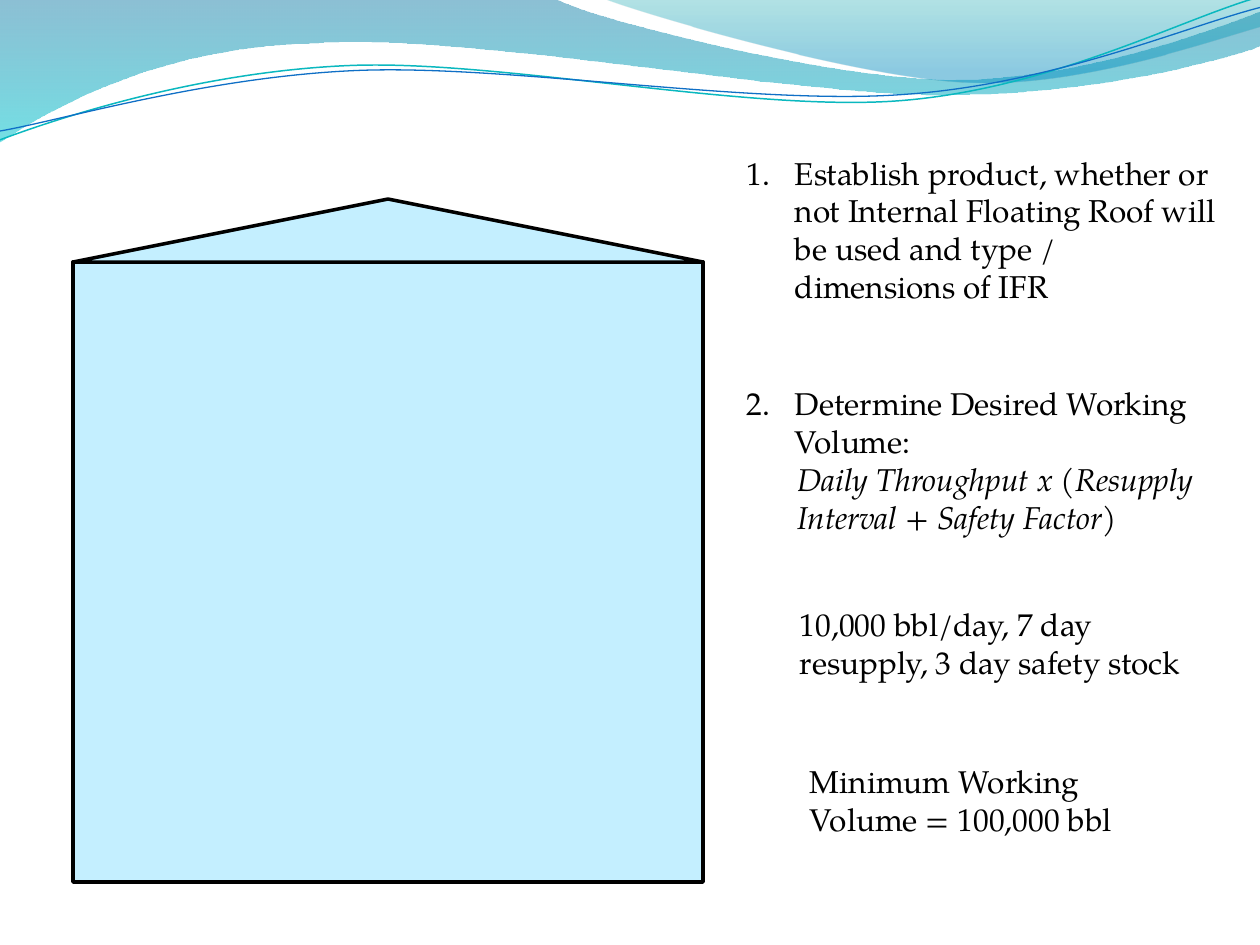
"""Build the tank sizing slide with a wave banner, a tank and numbered steps."""
from math import cos, radians, sin

from lxml import etree
from pptx import Presentation
from pptx.dml.color import RGBColor
from pptx.enum.shapes import MSO_SHAPE
from pptx.enum.text import MSO_AUTO_SIZE
from pptx.oxml.ns import qn
from pptx.util import Inches, Pt

RECTANGLE = MSO_SHAPE.RECTANGLE
TRIANGLE = MSO_SHAPE.ISOSCELES_TRIANGLE
GROW = MSO_AUTO_SIZE.SHAPE_TO_FIT_TEXT
BLACK = RGBColor(0x00, 0x00, 0x00)
TANK_BLUE = RGBColor(0xC4, 0xEF, 0xFF)
DEEP_BLUE = RGBColor(0x00, 0x74, 0xA1)
AQUA = RGBColor(0x00, 0xC6, 0xCF)
TEAL = RGBColor(0x00, 0xA1, 0xA9)
SKY = RGBColor(0x00, 0x8B, 0xBF)
LINE_TEAL = RGBColor(0x0A, 0xB8, 0xBF)
LINE_BLUE = RGBColor(0x0F, 0x6F, 0xC6)
FONT = "TeX Gyre Pagella"
TILT = 2.7

presentation = Presentation()
presentation.slide_width = Inches(10)
presentation.slide_height = Inches(7.5)
slide = presentation.slides.add_slide(presentation.slide_layouts[6])


def add_wave(start, segments, closed):
    """Draw a freeform from lines (one point) and Bezier curves (three points)."""
    corners = [(Inches(x), Inches(y)) for segment in segments for x, y in segment]
    builder = slide.shapes.build_freeform(Inches(start[0]), Inches(start[1]))
    builder.add_line_segments(corners, close=closed)
    shape = builder.convert_to_shape()
    shape.shadow.inherit = False
    lines = iter(list(shape.element.iter(qn("a:lnTo"))))
    for segment in segments:
        first, *others = [next(lines) for point in segment]
        if others:
            first.addprevious(curve := etree.Element(qn("a:cubicBezTo")))
            for line in (first, *others):
                curve.append(line[0])
                line.getparent().remove(line)
    return shape


broad_wave = [
    [(4.4, -0.01)],
    [(4.76, 0.17), (6.64, 0.63), (7.58, 0.63)],
    [(8.53, 0.63), (9.58, 0.26), (10, 0.09)],
    [(10.01, 0.36)],
    [(9.83, 0.44), (8.7, 0.76), (7.46, 0.75)],
    [(6.22, 0.75), (3.82, 0.28), (2.57, 0.34)],
    [(1.29, 0.36), (0.46, 0.83), (-0.01, 1.13)],
    [(0, 0)],
]
right_wave = [
    [(5.09, 0.11), (6.82, 0.62), (7.69, 0.65)],
    [(8.56, 0.69), (9.61, 0.32), (10, 0.21)],
    [(10, 0)],
    [(4.79, -0.01)],
]
for start, segments, stops in [
    ((0, 0), broad_wave, [(0, DEEP_BLUE, 45), (1, AQUA, 55)]),
    ((4.79, -0.01), right_wave, [(0, TEAL, 30), (0.8, SKY, 45)]),
]:
    wave = add_wave(start, segments, True)
    wave.line.fill.background()
    wave.fill.gradient()
    wave.fill.gradient_angle = 270
    for stop, (position, color, opacity) in zip(wave.fill.gradient_stops, stops):
        stop.position = position
        stop.color.rgb = color
    for element, (position, color, opacity) in zip(wave.element.iter(qn("a:srgbClr")), stops):
        etree.SubElement(element, qn("a:alpha")).set("val", str(opacity * 1000))

teal_curve = [
    [(0, 1.11)],
    [(0.48, 0.93), (1.58, 0.57), (2.77, 0.52)],
    [(3.95, 0.47), (5.93, 0.89), (7.13, 0.8)],
    [(8.33, 0.71), (9.38, 0.15), (9.98, -0.02)],
]
blue_curve = [
    [(0, 1.04)],
    [(0.47, 0.96), (1.64, 0.61), (2.83, 0.56)],
    [(4.03, 0.51), (5.97, 0.84), (7.17, 0.75)],
    [(8.36, 0.67), (9.41, 0.21), (10, 0.06)],
]
cosine, sine = cos(radians(TILT)), sin(radians(TILT))
for segments, center_x, center_y, color, width in [
    (teal_curve, 4.99, 0.58, LINE_TEAL, 0.85),
    (blue_curve, 5, 0.59, LINE_BLUE, 0.75),
]:
    level = [[(center_x + (x - center_x) * cosine - (y - center_y) * sine,
               center_y + (x - center_x) * sine + (y - center_y) * cosine)
              for x, y in segment] for segment in segments]
    curve_line = add_wave(level[0][0], level[1:], False)
    curve_line.rotation = 360 - TILT
    curve_line.fill.background()
    curve_line.line.color.rgb = color
    curve_line.line.width = Pt(width)

for preset, top, height in [(RECTANGLE, 2.08, 4.92), (TRIANGLE, 1.58, 0.5)]:
    tank_part = slide.shapes.add_shape(
        preset, Inches(0.58), Inches(top), Inches(5), Inches(height))
    tank_part.shadow.inherit = False
    tank_part.fill.solid()
    tank_part.fill.fore_color.rgb = TANK_BLUE
    tank_part.line.color.rgb = BLACK
    tank_part.line.width = Pt(2)


def add_text(left, top, width, height, text, number=None, formula=None):
    """Add a text box, with an optional step number and italic formula."""
    box = slide.shapes.add_textbox(Inches(left), Inches(top), Inches(width), Inches(height))
    frame = box.text_frame
    frame.word_wrap = True
    frame.auto_size = GROW
    paragraph = frame.paragraphs[0]
    paragraph.add_run().text = text
    if number:
        properties = paragraph._p.get_or_add_pPr()
        properties.set("marL", str(Inches(0.38)))
        properties.set("indent", str(-Inches(0.38)))
        bullet = etree.SubElement(properties, qn("a:buAutoNum"))
        bullet.set("type", "arabicPeriod")
        if number > 1:
            bullet.set("startAt", str(number))
    if formula:
        paragraph = frame.add_paragraph()
        paragraph.level = 1
        properties = paragraph._p.get_or_add_pPr()
        properties.set("marL", str(Inches(0.4)))
        properties.set("indent", "0")
        run = paragraph.add_run()
        run.text = formula
        run.font.italic = True
    for paragraph in frame.paragraphs:
        for run in paragraph.runs:
            run.font.name = FONT
            run.font.size = Pt(18)
            run.font.color.rgb = BLACK


add_text(5.83, 1.17, 3.92, 1.31,
         "Establish product, whether or not Internal Floating Roof will be used "
         "and type / dimensions of IFR", number=1)
add_text(5.83, 3, 4, 1.31, "Determine Desired Working Volume:", number=2,
         formula="Daily Throughput x (Resupply Interval + Safety Factor)")
add_text(6.25, 4.75, 3.5, 0.71, "10,000 bbl/day, 7 day resupply, 3 day safety stock")
add_text(6.33, 6, 3.25, 1.01, "Minimum Working Volume = 100,000 bbl")

presentation.save("out.pptx")
